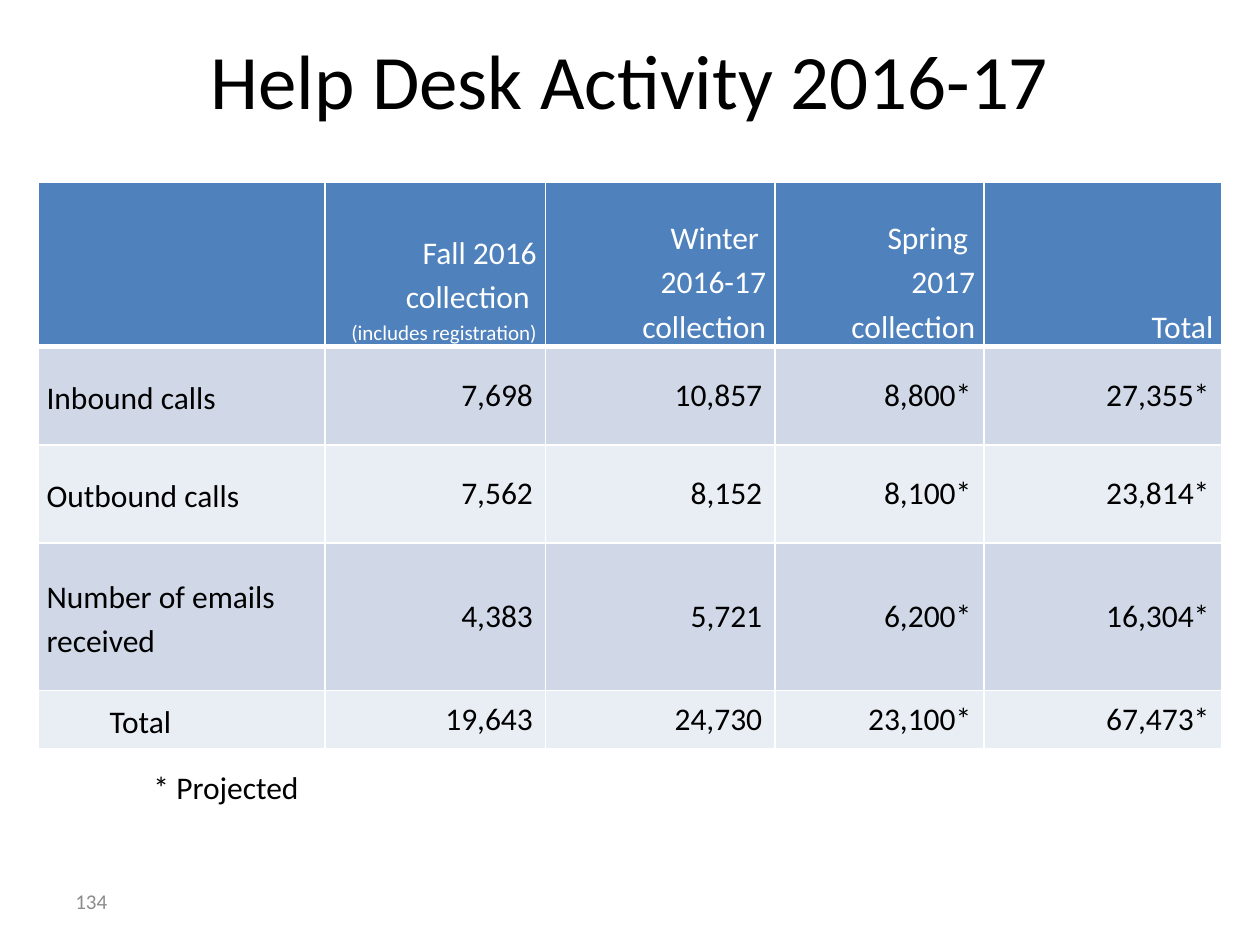
"""Build the Help Desk Activity slide with its table of call and email counts."""
from dataclasses import dataclass

from lxml import etree
from pptx import Presentation
from pptx import util as u
from pptx.dml.color import RGBColor
from pptx.enum import text
from pptx.oxml import ns

ALIGN, ANCHOR = text.PP_ALIGN, text.MSO_ANCHOR


@dataclass(frozen=True)
class Theme:
    font: str = "Calibri"
    ink: str = "000000"
    paper: str = "FFFFFF"
    header: str = "4F81BD"
    bands: tuple[str, str] = ("D0D8E8", "E9EDF4")
    muted: str = "8C8C8C"
    title: int = 44
    body: int = 18
    small: int = 12


@dataclass(frozen=True)
class Label:
    text: str
    box: tuple[float, float, float, float]
    size: int
    color: str
    align: ALIGN = ALIGN.LEFT
    anchor: ANCHOR = ANCHOR.MIDDLE


@dataclass(frozen=True)
class Header:
    lines: tuple[str, ...] = ()
    note: str = ""


@dataclass(frozen=True)
class Row:
    name: str
    values: tuple[str, ...]
    height: float
    indent: float = 0


T = Theme()
LABELS = (
    Label("Help Desk Activity 2016-17", (0.5, 0, 9, 1.25), T.title, T.ink, ALIGN.CENTER),
    Label("* Projected", (1.12, 6.05, 5, 0.4), T.body, T.ink, anchor=ANCHOR.TOP),
    Label("134", (0.5, 6.95, 2.33, 0.4), T.small, T.muted),
)
HEADERS = (
    Header(),
    Header(("Fall 2016 collection ",), "(includes registration)"),
    Header(("Winter ", "2016-17 collection")),
    Header(("Spring ", "2017 collection")),
    Header(("Total",)),
)
ROWS = (
    Row("Inbound calls", ("7,698", "10,857", "8,800*", "27,355*"), 0.78),
    Row("Outbound calls", ("7,562", "8,152", "8,100*", "23,814*"), 0.78),
    Row("Number of emails received", ("4,383", "5,721", "6,200*", "16,304*"), 1.17),
    Row("Total", ("19,643", "24,730", "23,100*", "67,473*"), 0.46, 0.5),
)
COLUMNS = (2.28, 1.75, 1.82, 1.66, 1.89)
HEADER_HEIGHT = 1.3


def style(p, size: int, color: str, align: ALIGN = ALIGN.LEFT) -> None:
    p.alignment = align
    p.font.name = T.font
    p.font.size = u.Pt(size)
    p.font.color.rgb = RGBColor.from_string(color)


def add_label(s, label: Label) -> None:
    tf = s.shapes.add_textbox(*map(u.Inches, label.box)).text_frame
    tf.word_wrap = True
    tf.vertical_anchor = label.anchor
    p = tf.paragraphs[0]
    p.text = label.text
    style(p, label.size, label.color, label.align)


def paint(cell, fill: str, bottom: float = 1) -> None:
    tc_pr = cell._tc.get_or_add_tcPr()
    for side, width in (("L", 1), ("R", 1), ("T", 1), ("B", bottom)):
        ln = etree.SubElement(tc_pr, ns.qn(f"a:ln{side}"), w=str(u.Pt(width)))
        solid = etree.SubElement(ln, ns.qn("a:solidFill"))
        etree.SubElement(solid, ns.qn("a:srgbClr"), val=T.paper)
    cell.fill.solid()
    cell.fill.fore_color.rgb = RGBColor.from_string(fill)


def tighten(cell) -> None:
    cell.margin_left = cell.margin_right = u.Inches(0.07)
    cell.margin_top = cell.margin_bottom = 0
    for p in cell.text_frame.paragraphs:
        p.line_spacing = 1.15


def fill_header(cell, header: Header) -> None:
    cell.text = "\n".join(header.lines)
    cell.vertical_anchor = ANCHOR.BOTTOM
    for p in cell.text_frame.paragraphs:
        style(p, T.body, T.paper, ALIGN.RIGHT)
    if header.note:
        p.add_line_break()
        r = p.add_run()
        r.text = header.note
        r.font.size = u.Pt(T.small)
    tighten(cell)
    paint(cell, T.header, bottom=3)


def fill_body(cell, value: str, fill: str, align: ALIGN) -> None:
    cell.text = value
    cell.vertical_anchor = ANCHOR.MIDDLE
    style(cell.text_frame.paragraphs[0], T.body, T.ink, align)
    paint(cell, fill)


def add_activity_table(s) -> None:
    heights = (HEADER_HEIGHT, *(row.height for row in ROWS))
    box = (0.3, 1.45, sum(COLUMNS), sum(heights))
    table = s.shapes.add_table(len(heights), len(COLUMNS), *map(u.Inches, box)).table
    for column, width in zip(table.columns, COLUMNS):
        column.width = u.Inches(width)
    for table_row, height in zip(table.rows, heights):
        table_row.height = u.Inches(height)
    for i, header in enumerate(HEADERS):
        fill_header(table.cell(0, i), header)
    for n, row in enumerate(ROWS):
        fill = T.bands[n % 2]
        name = table.cell(n + 1, 0)
        fill_body(name, row.name, fill, ALIGN.LEFT)
        tighten(name)
        if row.indent:
            p_pr = name.text_frame.paragraphs[0]._p.get_or_add_pPr()
            p_pr.set("marL", str(u.Inches(row.indent)))
        for i, value in enumerate(row.values, 1):
            fill_body(table.cell(n + 1, i), value, fill, ALIGN.RIGHT)


def main() -> None:
    prs = Presentation()
    prs.slide_width, prs.slide_height = u.Inches(10), u.Inches(7.5)
    s = prs.slides.add_slide(prs.slide_layouts[6])
    add_activity_table(s)
    for label in LABELS:
        add_label(s, label)
    prs.save("out.pptx")


if __name__ == "__main__":
    main()
